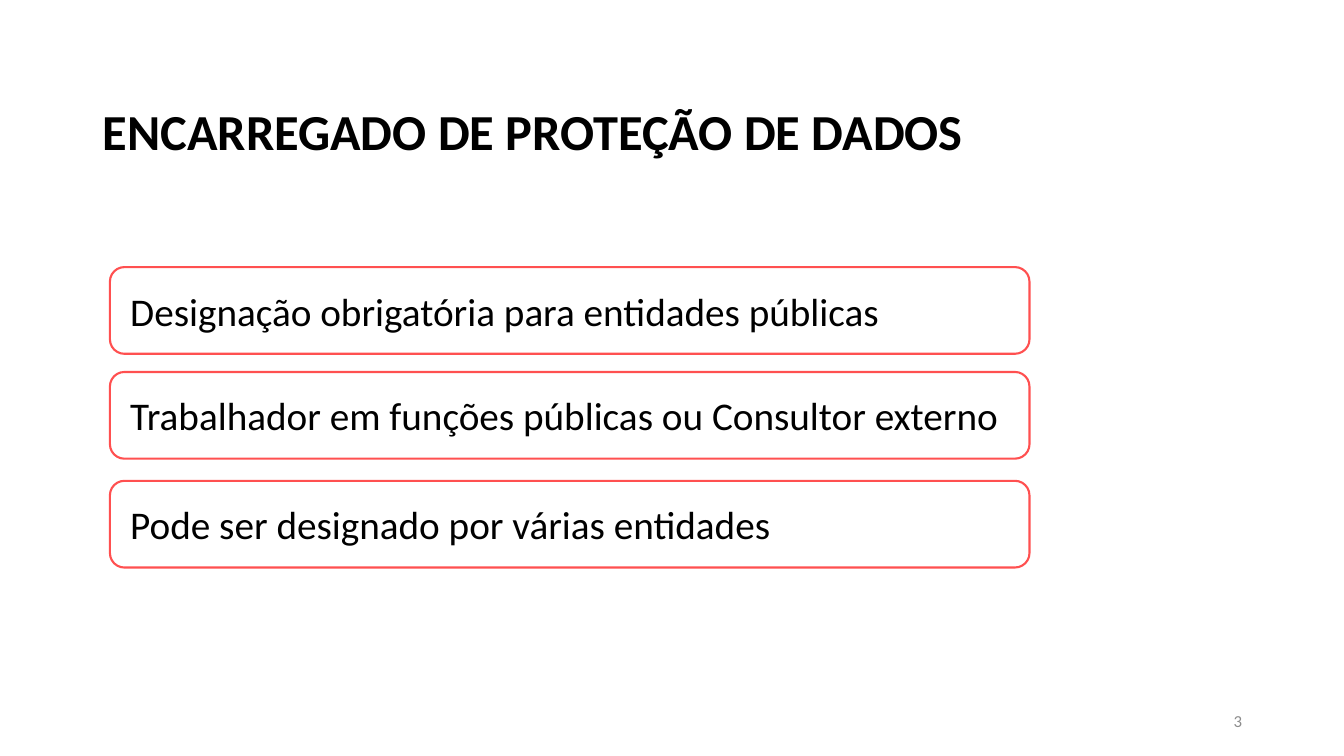
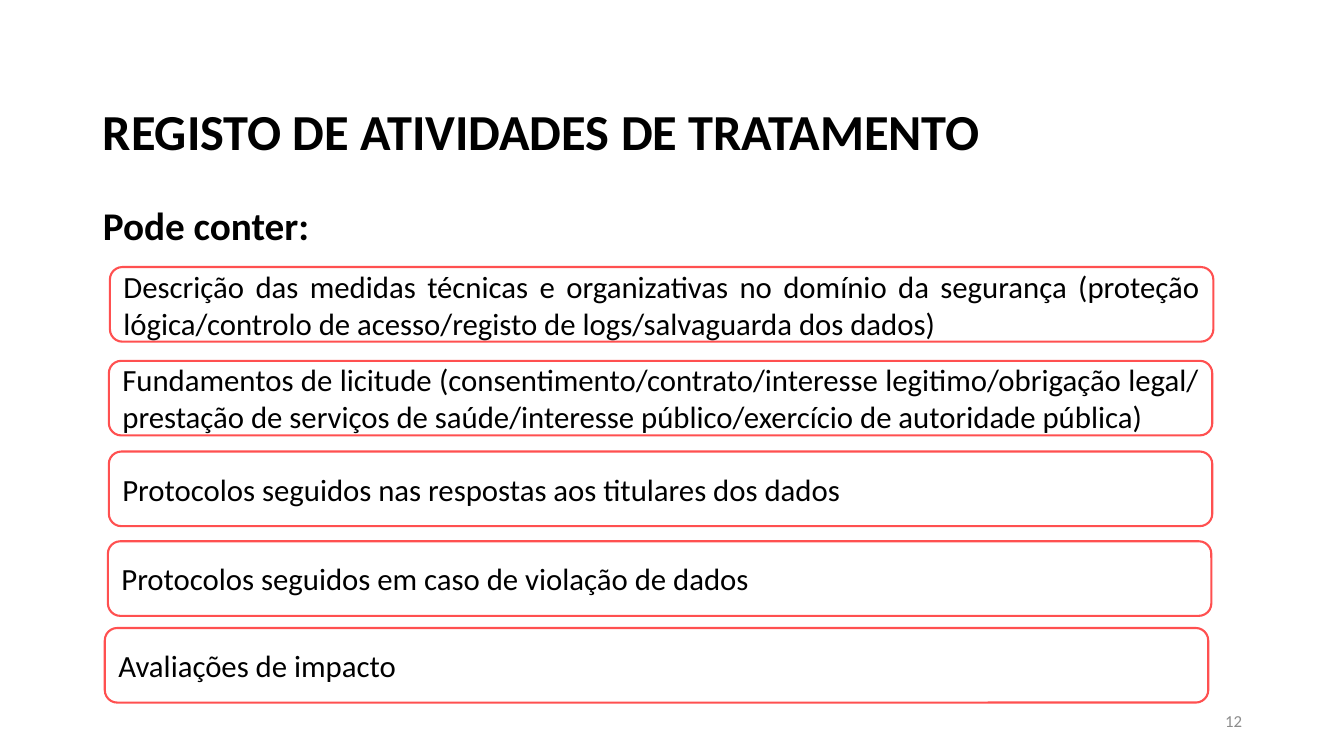
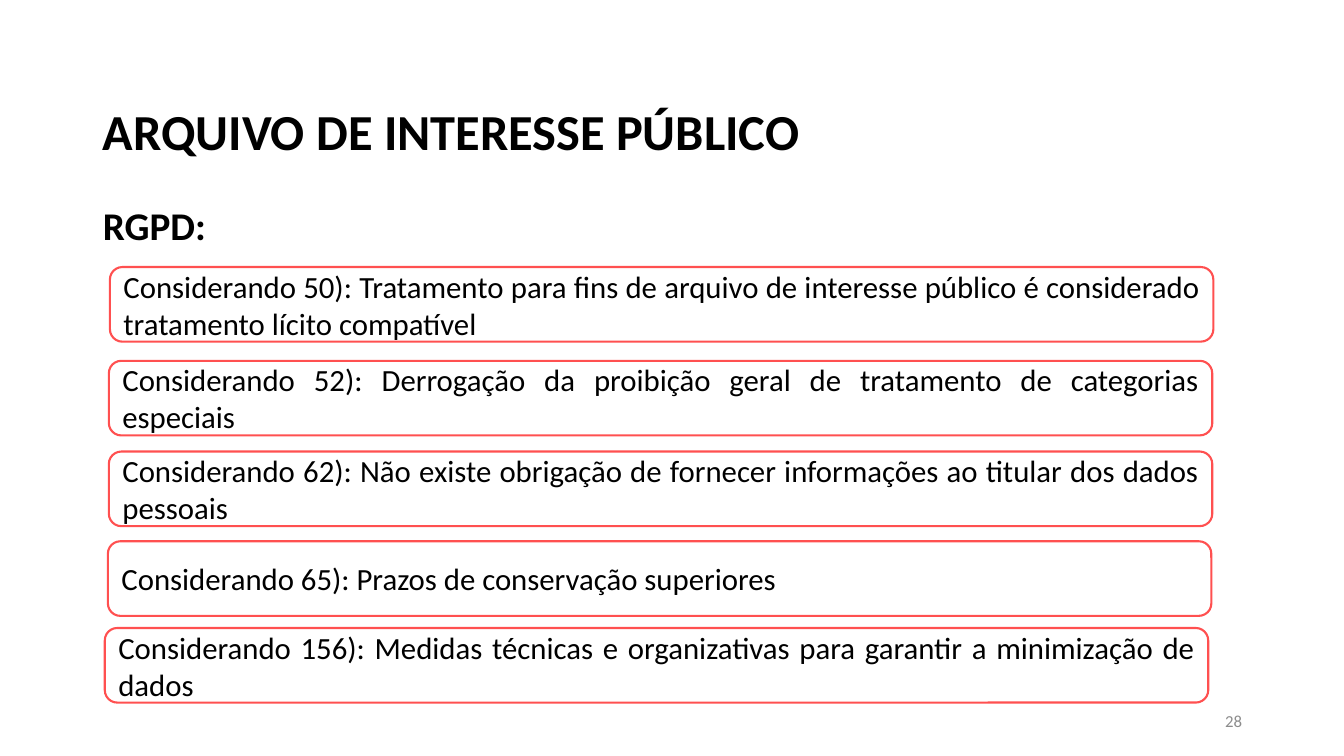
import pptx
import pptx.util
import pptx.dml.color
import pptx.enum.shapes
import pptx.enum.text
import pptx.oxml.ns
from lxml import etree

COLORS = {"text": "000000", "frame": "FF5050", "number": "8C8C8C"}
FONT = "Calibri"
ALIGN = pptx.enum.text.PP_ALIGN
ANCHOR = pptx.enum.text.MSO_ANCHOR

prs = pptx.Presentation()
prs.slide_width = pptx.util.Inches(13.33)
prs.slide_height = pptx.util.Inches(7.5)
COL = prs.slide_width / 100
ROW = prs.slide_height / 100


def place(sp, left, top, width, height):
    sp.left, sp.width = round(left * COL), round(width * COL)
    sp.top, sp.height = round(top * ROW), round(height * ROW)


def write(sp, text, size, color="text", bold=False, align=ALIGN.LEFT,
          anchor=ANCHOR.MIDDLE, spacing=1.0, inset_left=0.1, inset_top=0.05):
    tf = sp.text_frame
    tf.word_wrap = True
    tf.auto_size = pptx.enum.text.MSO_AUTO_SIZE.NONE
    tf.vertical_anchor = anchor
    tf.margin_left = pptx.util.Inches(inset_left)
    tf.margin_right = pptx.util.Inches(0.1)
    tf.margin_top = pptx.util.Inches(inset_top)
    tf.margin_bottom = pptx.util.Inches(0.05)
    p = tf.paragraphs[0]
    p.alignment = align
    p.line_spacing = spacing
    p.space_before = pptx.util.Pt(0)
    r = p.add_run()
    r.text = text
    r.font.name = FONT
    r.font.size = pptx.util.Pt(size)
    r.font.bold = bold
    r.font.color.rgb = pptx.dml.color.RGBColor.from_string(COLORS[color])
    return p


WIDE = {
    "lefts": [8.18, 8.1, 8.1, 8.03, 7.8],
    "tops": [35.33, 47.73, 59.73, 71.6, 83.07],
    "width": 82.1, "height": 9.87, "size": 22, "inset": 0.1,
}
NARROW = {
    "lefts": [8.18, 8.18, 8.18],
    "tops": [35.33, 49.2, 63.6],
    "width": 68.42, "height": 11.47, "size": 28, "inset": 0.16,
}

slides = [
    ("ENCARREGADO DE PROTEÇÃO DE DADOS", None, "3", NARROW, [
        "Designação obrigatória para entidades públicas",
        "Trabalhador em funções públicas ou Consultor externo",
        "Pode ser designado por várias entidades",
    ]),
    ("REGISTO DE ATIVIDADES DE TRATAMENTO", "Pode conter:", "12", WIDE, [
        "Descrição das medidas técnicas e organizativas no domínio da segurança "
        "(proteção lógica/controlo de acesso/registo de logs/salvaguarda dos dados)",
        "Fundamentos de licitude (consentimento/contrato/interesse "
        "legitimo/obrigação legal/ prestação de serviços de saúde/interesse "
        "público/exercício de autoridade pública)",
        "Protocolos seguidos nas respostas aos titulares dos dados",
        "Protocolos seguidos em caso de violação de dados",
        "Avaliações de impacto",
    ]),
    ("ARQUIVO DE INTERESSE PÚBLICO", "RGPD:", "28", WIDE, [
        "Considerando 50): Tratamento para fins de arquivo de interesse público "
        "é considerado tratamento lícito compatível",
        "Considerando 52): Derrogação da proibição geral de tratamento de "
        "categorias especiais",
        "Considerando 62): Não existe obrigação de fornecer informações ao "
        "titular dos dados pessoais",
        "Considerando 65): Prazos de conservação superiores",
        "Considerando 156): Medidas técnicas e organizativas para garantir a "
        "minimização de dados",
    ]),
]

for title, lead, number, grid, items in slides:
    s = prs.slides.add_slide(prs.slide_layouts[1 if lead else 5])
    place(s.shapes.title, 6.9, 5.33, 86.27, 19.33)
    write(s.shapes.title, title, 36, bold=True, spacing=0.9, inset_top=0.47)

    if lead:
        body = s.placeholders[1]
        place(body, 6.9, 26.67, 86.27, 63.47)
        p = write(body, lead, 28, bold=True, anchor=ANCHOR.TOP, spacing=0.9)
        pPr = p._p.get_or_add_pPr()
        pPr.set("marL", "0")
        pPr.set("indent", "0")
        etree.SubElement(pPr, pptx.oxml.ns.qn("a:buNone"))

    for left, top, item in zip(grid["lefts"], grid["tops"], items):
        sp = s.shapes.add_shape(pptx.enum.shapes.MSO_SHAPE.ROUNDED_RECTANGLE, 0, 0, 0, 0)
        place(sp, left, top, grid["width"], grid["height"])
        sp.shadow.inherit = False
        sp.fill.background()
        sp.line.color.rgb = pptx.dml.color.RGBColor.from_string(COLORS["frame"])
        sp.line.width = pptx.util.Pt(1.5)
        write(sp, item, grid["size"], align=ALIGN.JUSTIFY, inset_left=grid["inset"])

    sp = s.shapes.add_textbox(0, 0, 0, 0)
    place(sp, 70.67, 92.67, 22.5, 5.33)
    write(sp, number, 12, color="number", align=ALIGN.RIGHT)

prs.save("out.pptx")
